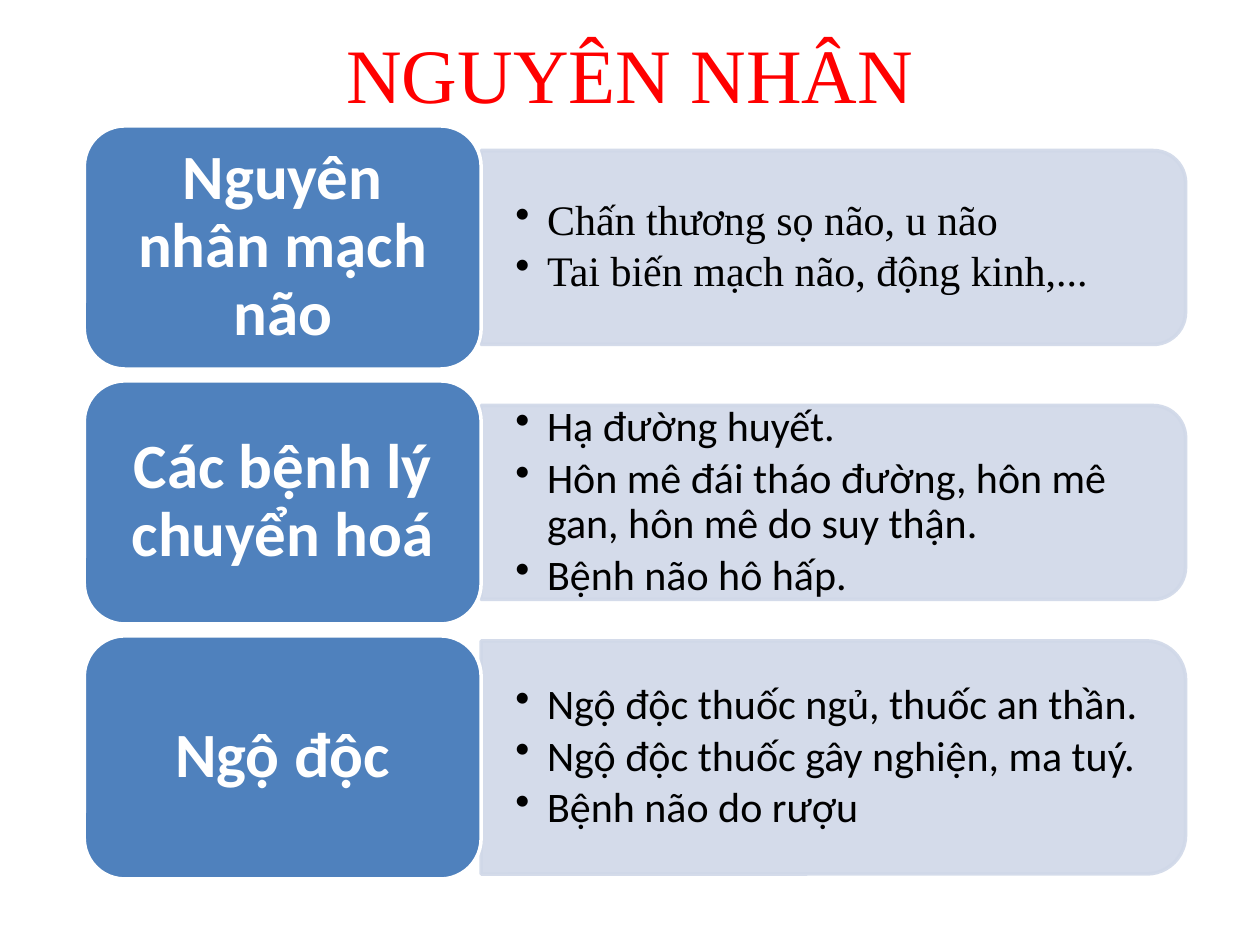
from lxml import etree
from pptx import Presentation
from pptx.dml.color import RGBColor
from pptx.enum.shapes import MSO_SHAPE
from pptx.enum.text import MSO_ANCHOR, PP_ALIGN
from pptx.oxml.ns import qn
from pptx.util import Cm, Pt

ROUNDED = MSO_SHAPE.ROUNDED_RECTANGLE
ROUNDED_TOP = MSO_SHAPE.ROUND_2_SAME_RECTANGLE
MIDDLE = MSO_ANCHOR.MIDDLE
LEFT, CENTER = PP_ALIGN.LEFT, PP_ALIGN.CENTER

RED = RGBColor(0xFF, 0x00, 0x00)
BLACK = RGBColor(0x00, 0x00, 0x00)
WHITE = RGBColor(0xFF, 0xFF, 0xFF)
BLUE = RGBColor(0x4F, 0x81, 0xBD)
PALE_BLUE = RGBColor(0xD0, 0xD8, 0xE8)

SERIF, SANS = "Times New Roman", "Calibri"

# Row layout in centimetres
FIRST_CENTER, ROW_PITCH = 4.99, 5.14
CARD_LEFT, CARD_WIDTH, CARD_HEIGHT = 1.7, 8.0, 4.9
PANEL_LEFT, PANEL_WIDTH = CARD_LEFT + CARD_WIDTH, 14.2
LIST_WIDTH, LIST_MARGIN = 14.0, 0.38

# Heading, panel height, list font, list items
ROWS = [
    ("Nguyên nhân mạch não", 3.91, SERIF,
     ["Chấn thương sọ não, u não", "Tai biến mạch não, động kinh,..."]),
    ("Các bệnh lý chuyển hoá", 3.91, SANS,
     ["Hạ đường huyết.",
      "Hôn mê đái tháo đường, hôn mê gan, hôn mê do suy thận.",
      "Bệnh não hô hấp."]),
    ("Ngộ độc", 4.7, SANS,
     ["Ngộ độc thuốc ngủ, thuốc an thần.",
      "Ngộ độc thuốc gây nghiện, ma tuý.",
      "Bệnh não do rượu"]),
]


def add_bullet(paragraph):
    properties = paragraph._p.get_or_add_pPr()
    indent = Cm(0.64)
    properties.set("marL", str(indent))
    properties.set("indent", str(-indent))
    etree.SubElement(properties, qn("a:buChar")).set("char", "•")


def write_text(frame, lines, *, size, font, color, bold=False, align=LEFT,
               line_spacing=None, space_after=0, margins=None, bullets=False):
    frame.word_wrap = True
    frame.vertical_anchor = MIDDLE
    if margins:
        horizontal, vertical = (Cm(margin) for margin in margins)
        frame.margin_left = frame.margin_right = horizontal
        frame.margin_top = frame.margin_bottom = vertical
    for index, line in enumerate(lines):
        paragraph = frame.add_paragraph() if index else frame.paragraphs[0]
        paragraph.alignment = align
        paragraph.line_spacing = line_spacing
        paragraph.space_after = Pt(space_after)
        if bullets:
            paragraph.level = 1
            add_bullet(paragraph)
        run = paragraph.add_run()
        run.text = line
        run.font.size = Pt(size)
        run.font.name = font
        run.font.bold = bold
        run.font.color.rgb = color


def set_opacity(color_format_owner, percent):
    for color in color_format_owner.iter(qn("a:srgbClr")):
        etree.SubElement(color, qn("a:alpha")).set("val", str(percent * 1000))


class SlideBuilder:
    def __init__(self, presentation):
        self.slide = presentation.slides.add_slide(presentation.slide_layouts[5])

    def title(self, text):
        title = self.slide.shapes.title
        title.left, title.top = Cm(1.27), Cm(0)
        title.width, title.height = Cm(22.86), Cm(2.92)
        write_text(title.text_frame, [text], size=44, font=SERIF, color=RED,
                   align=CENTER)

    def shape(self, kind, center_x, center_y, width, height, fill, line):
        shape = self.slide.shapes.add_shape(
            kind, Cm(center_x - width / 2), Cm(center_y - height / 2),
            Cm(width), Cm(height))
        shape.shadow.inherit = False
        shape.fill.solid()
        shape.fill.fore_color.rgb = fill
        shape.line.color.rgb = line
        shape.line.width = Pt(2)
        return shape

    def panel(self, center_y, height):
        # Turned a quarter so that the rounded corners face right
        panel = self.shape(ROUNDED_TOP, PANEL_LEFT + PANEL_WIDTH / 2, center_y,
                           height, PANEL_WIDTH, PALE_BLUE, PALE_BLUE)
        panel.rotation = 90
        set_opacity(panel._element.spPr, 90)

    def bullet_list(self, center_y, height, items, font):
        box = self.slide.shapes.add_textbox(
            Cm(PANEL_LEFT), Cm(center_y - height / 2), Cm(LIST_WIDTH), Cm(height))
        write_text(box.text_frame, items, size=24, font=font, color=BLACK,
                   line_spacing=0.9, space_after=3.6, margins=(0.69, 0.36),
                   bullets=True)

    def card(self, center_y, heading):
        card = self.shape(ROUNDED, CARD_LEFT + CARD_WIDTH / 2, center_y,
                          CARD_WIDTH, CARD_HEIGHT, BLUE, WHITE)
        write_text(card.text_frame, [heading], size=36, font=SANS, color=WHITE,
                   bold=True, align=CENTER, line_spacing=0.9,
                   margins=(0.38, 0.19))


def main():
    presentation = Presentation()
    presentation.slide_width, presentation.slide_height = Cm(25.4), Cm(19.05)
    builder = SlideBuilder(presentation)
    builder.title("NGUYÊN NHÂN")

    # One row per group of causes
    for index, (heading, panel_height, font, items) in enumerate(ROWS):
        center_y = FIRST_CENTER + index * ROW_PITCH
        builder.panel(center_y, panel_height)
        builder.bullet_list(center_y, panel_height - LIST_MARGIN, items, font)
        builder.card(center_y, heading)

    presentation.save("out.pptx")


if __name__ == "__main__":
    main()
